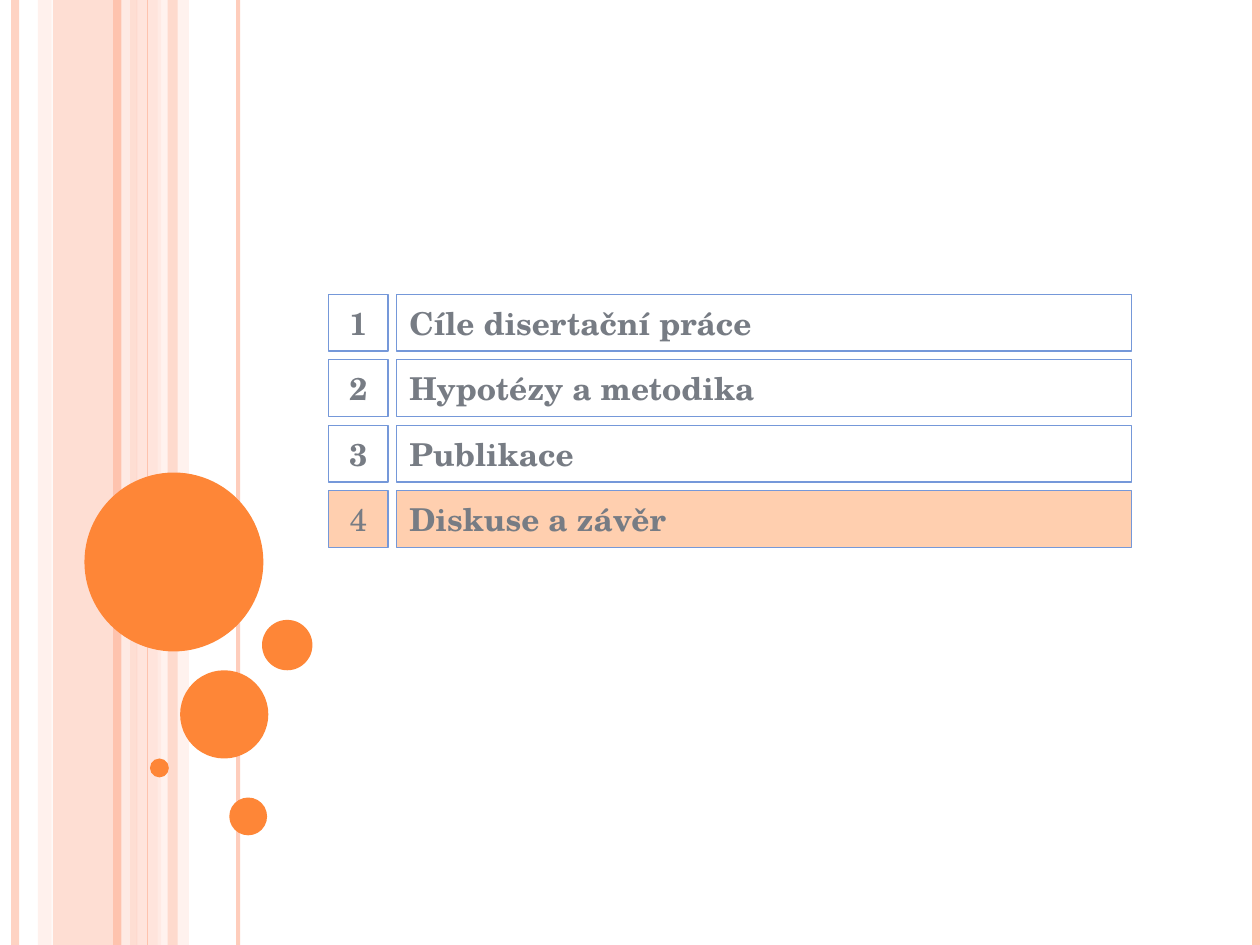
from lxml import etree
from pptx import Presentation
from pptx import util as u
from pptx.dml.color import RGBColor
from pptx.enum import shapes, text
from pptx.oxml.ns import qn

PEACH = RGBColor(0xFE, 0xC3, 0xAE)
BLUSH = RGBColor(0xFF, 0xD9, 0xCE)
PALE = RGBColor(0xFF, 0xED, 0xE8)
ORANGE = RGBColor(0xFE, 0x86, 0x37)
HIGHLIGHT = RGBColor(0xFF, 0xCF, 0xAF)
BLUE = RGBColor(0x75, 0x98, 0xD9)
GRAY = RGBColor(0x77, 0x7C, 0x84)

COLUMNS, ROWS = 100, 75  # grid over the whole slide


class Agenda:
    """Style and current slide; lengths are grid columns and rows."""
    font, size, border = "TeX Gyre Schola", u.Pt(18), u.Pt(0.75)

    def __init__(self, deck):
        self.slide = deck.slides.add_slide(deck.slide_layouts[6])
        self.column = deck.slide_width / COLUMNS
        self.row = deck.slide_height / ROWS

    def x(self, columns):
        return round(columns * self.column)

    def y(self, rows):
        return round(rows * self.row)

    def fade(self, fill, opacity):
        color = fill._xPr.find(".//" + qn("a:srgbClr"))
        etree.SubElement(color, qn("a:alpha"), val=str(opacity * 1000))

    def shape(self, kind, left, top, width, height, color=None, opacity=100):
        item = self.slide.shapes.add_shape(
            kind, self.x(left), self.y(top), self.x(width), self.y(height))
        item.shadow.inherit = False
        item.line.fill.background()
        if color is None:
            item.fill.background()
        else:
            item.fill.solid()
            item.fill.fore_color.rgb = color
            if opacity < 100:
                self.fade(item.fill, opacity)
        return item

    def band(self, left, width, color, opacity):
        self.shape(shapes.MSO_SHAPE.RECTANGLE, left, 0, width, ROWS, color, opacity)

    def stripe(self, column, color, points, opacity=100):
        line = self.slide.shapes.add_connector(
            shapes.MSO_CONNECTOR.STRAIGHT, self.x(column), 0, self.x(column), self.y(ROWS))
        line.line.color.rgb = color
        line.line.width = u.Pt(points)
        if opacity < 100:
            self.fade(line.line.fill, opacity)
        etree.SubElement(line._element.spPr, qn("a:effectLst"))

    def bubble(self, left, top, diameter):
        self.shape(shapes.MSO_SHAPE.OVAL, left, top, diameter, diameter, ORANGE)

    def box(self, left, top, width, height, words, align, bold, color):
        item = self.shape(shapes.MSO_SHAPE.RECTANGLE, left, top, width, height, color)
        item.line.color.rgb = BLUE
        item.line.width = self.border
        frame = item.text_frame
        frame.word_wrap = True
        frame.vertical_anchor = text.MSO_ANCHOR.MIDDLE
        paragraph = frame.paragraphs[0]
        paragraph.alignment = align
        run = paragraph.add_run()
        run.text = words
        run.font.name, run.font.size, run.font.bold = self.font, self.size, bold
        run.font.color.rgb = GRAY

    def topic(self, number, title, current=False):
        top = 23.35 + 5.2 * (number - 1)
        color = HIGHLIGHT if current else None
        self.box(31.5, top, 58.3, 4.5, title, text.PP_ALIGN.LEFT, True, color)
        self.box(26.1, top, 4.7, 4.5, str(number), text.PP_ALIGN.CENTER, not current, color)


def main():
    deck = Presentation()
    deck.slide_width, deck.slide_height = u.Inches(10), u.Inches(7.5)
    agenda = Agenda(deck)

    # Wide translucent bands on the left
    for band in ((4.2, 6.7, PEACH, 54), (3, 1.1, BLUSH, 36),
                 (10.8, 2, BLUSH, 70), (12.5, 2.5, PALE, 71)):
        agenda.band(*band)

    # Thin stripes, the last one along the right edge
    for stripe in ((1.2, PEACH, 4.5, 73), (10, PALE, 4.5, 83), (9.3, PEACH, 4.5),
                   (18.9, PEACH, 2.25, 82), (11.7, PEACH, 0.75), (99.7, PEACH, 4.5)):
        agenda.stripe(*stripe)
    agenda.band(13.3, 0.8, PEACH, 51)

    # Bubbles
    for bubble in ((6.7, 37.5, 14.2), (14.3, 53.2, 7), (11.9, 60.2, 1.5),
                   (18.2, 63.3, 3), (20.8, 49.2, 4)):
        agenda.bubble(*bubble)

    # Numbered topics, the last one current
    topics = ("Cíle disertační práce", "Hypotézy a metodika", "Publikace", "Diskuse a závěr")
    for number, title in enumerate(topics, 1):
        agenda.topic(number, title, current=number == len(topics))

    deck.save("out.pptx")


if __name__ == "__main__":
    main()
